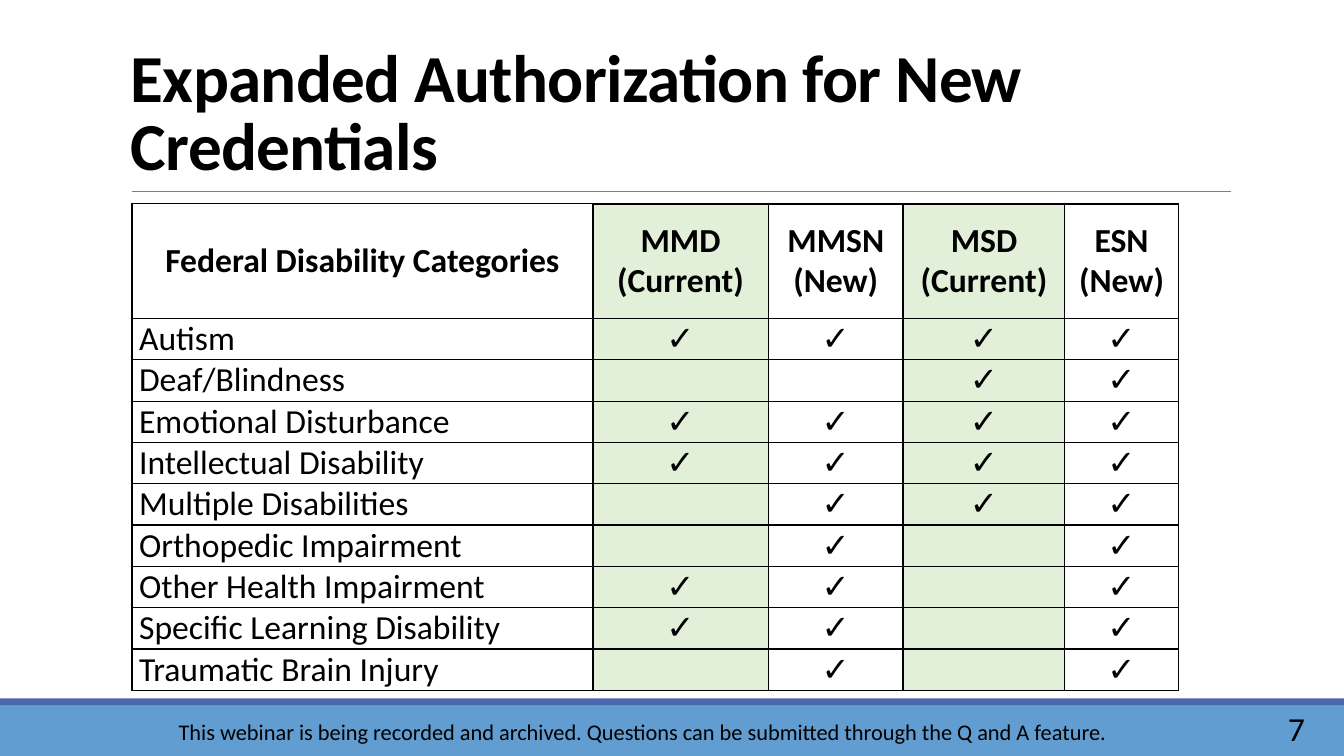
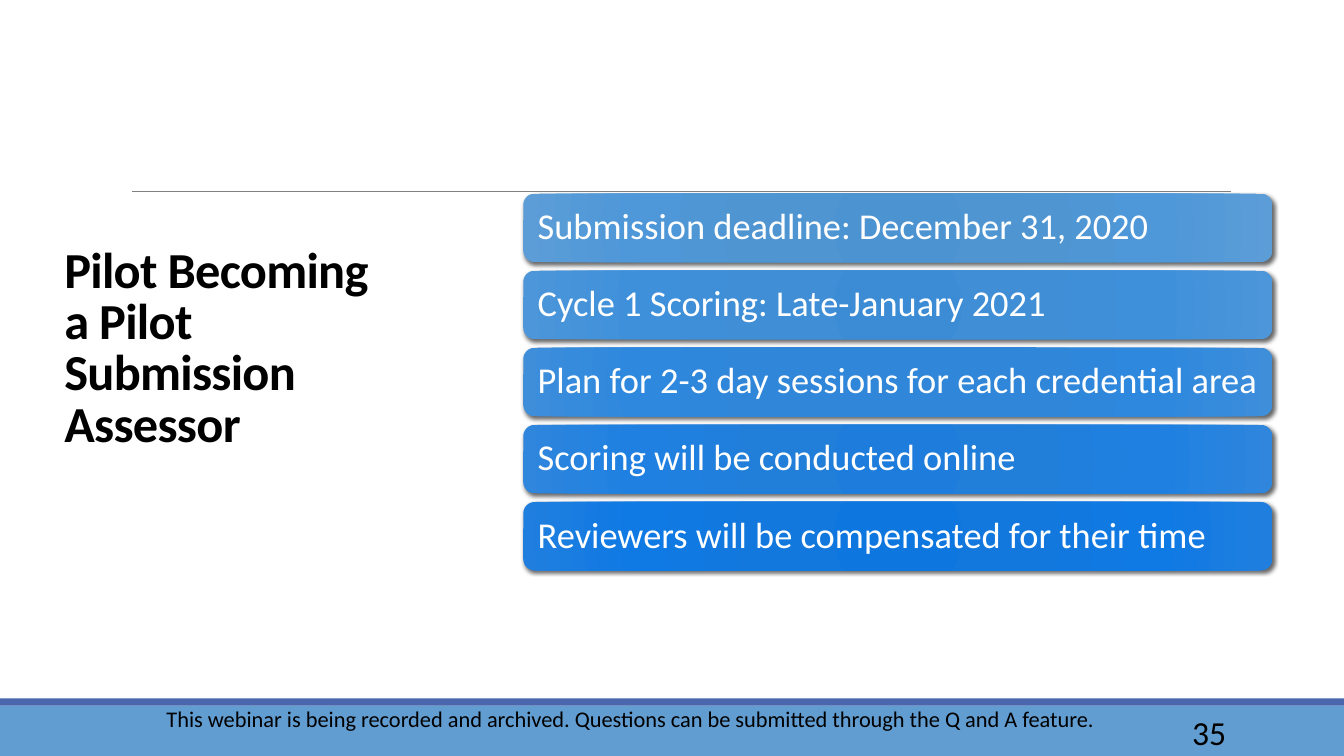
from lxml import etree
from pptx import Presentation
from pptx.dml.color import RGBColor
from pptx.enum.shapes import MSO_CONNECTOR, MSO_SHAPE
from pptx.enum.text import MSO_ANCHOR, PP_ALIGN
from pptx.oxml import parse_xml
from pptx.oxml.ns import nsdecls, qn
from pptx.util import Inches, Pt

RECTANGLE = MSO_SHAPE.RECTANGLE
ROUNDED = MSO_SHAPE.ROUNDED_RECTANGLE
STRAIGHT = MSO_CONNECTOR.STRAIGHT
MIDDLE = MSO_ANCHOR.MIDDLE
BOTTOM = MSO_ANCHOR.BOTTOM
LEFT = PP_ALIGN.LEFT
CENTER = PP_ALIGN.CENTER
RIGHT = PP_ALIGN.RIGHT

BLACK = RGBColor(0x00, 0x00, 0x00)
WHITE = RGBColor(0xFF, 0xFF, 0xFF)
GRAY = RGBColor(0x80, 0x80, 0x80)
FOOTER_BLUE = RGBColor(0x62, 0x9D, 0xD1)
STRIPE_BLUE = RGBColor(0x4A, 0x66, 0xAC)
CURRENT_GREEN = RGBColor(0xE2, 0xEF, 0xD9)

FONT = "Calibri"
SLIDE_WIDTH, SLIDE_HEIGHT = 13.33, 7.5
FOOTER_TEXT = (
    "This webinar is being recorded and archived. "
    "Questions can be submitted through the Q and A feature."
)

CHECK = "✓"
CATEGORY_ROWS = [
    ("Federal Disability Categories", "MMD (Current)", "MMSN (New)", "MSD (Current)", "ESN (New)"),
    ("Autism", CHECK, CHECK, CHECK, CHECK),
    ("Deaf/Blindness", "", "", CHECK, CHECK),
    ("Emotional Disturbance", CHECK, CHECK, CHECK, CHECK),
    ("Intellectual Disability", CHECK, CHECK, CHECK, CHECK),
    ("Multiple Disabilities", "", CHECK, CHECK, CHECK),
    ("Orthopedic Impairment", "", CHECK, "", CHECK),
    ("Other Health Impairment", CHECK, CHECK, "", CHECK),
    ("Specific Learning Disability", CHECK, CHECK, "", CHECK),
    ("Traumatic Brain Injury", "", CHECK, "", CHECK),
]
COLUMN_WIDTHS = [4.57, 1.74, 1.34, 1.6, 1.13]
HEADER_HEIGHT, ROW_HEIGHT = 1.14, 0.41
CURRENT_COLUMNS = (1, 3)
THIN, THICK = Pt(1), Pt(1.5)

ASSESSOR_POINTS = [
    "Submission deadline: December 31, 2020",
    "Cycle 1 Scoring: Late-January 2021",
    "Plan for 2-3 day sessions for each credential area",
    "Scoring will be conducted online",
    "Reviewers will be compensated for their time",
]
FIRST_BAR_TOP, LAST_BAR_TOP = 1.92, 4.98
GRADIENT_STOPS = [
    (0, RGBColor(0x4C, 0x93, 0xD2), RGBColor(0x0E, 0x76, 0xDF)),
    (34, RGBColor(0x4F, 0x95, 0xD2), RGBColor(0x12, 0x78, 0xDD)),
    (70, RGBColor(0x4E, 0x97, 0xD8), RGBColor(0x0F, 0x79, 0xE4)),
    (100, RGBColor(0x5C, 0x9D, 0xD7), RGBColor(0x20, 0x7F, 0xDE)),
]


def box(*lengths):
    return [Inches(length) for length in lengths]


def write(frame, text, size, color=BLACK, bold=False, align=LEFT, spacing=None):
    paragraph = frame.paragraphs[0]
    if text:
        paragraph.text = text
    paragraph.alignment = align
    paragraph.line_spacing = spacing
    font = paragraph.font
    font.name, font.size, font.bold = FONT, Pt(size), bold
    font.color.rgb = color
    return paragraph


def add_text(slide, place, text, size, anchor=MIDDLE, **style):
    frame = slide.shapes.add_textbox(*box(*place)).text_frame
    frame.word_wrap = True
    frame.vertical_anchor = anchor
    return write(frame, text, size, **style)


def add_title(slide, place, text, size, anchor):
    title = add_text(slide, place, text, size, anchor, bold=True, spacing=0.85)
    title._p.pPr.find(qn("a:defRPr")).set("spc", "-50")


def add_band(slide, top, height, color):
    band = slide.shapes.add_shape(RECTANGLE, *box(0, top, SLIDE_WIDTH, height))
    band.shadow.inherit = False
    band.fill.solid()
    band.fill.fore_color.rgb = color
    band.line.fill.background()


def add_rule(slide):
    rule = slide.shapes.add_connector(STRAIGHT, *box(1.31, 1.9, 12.21, 1.9))
    rule.line.color.rgb = GRAY
    rule.line.width = Pt(0.5)
    etree.SubElement(rule._element.spPr, qn("a:effectLst"))


def add_framed_slide(deck):
    slide = deck.slides.add_slide(deck.slide_layouts[6])
    add_band(slide, 7, 0.5, FOOTER_BLUE)
    add_band(slide, 6.93, 0.07, STRIPE_BLUE)
    add_rule(slide)
    return slide


def add_footer(slide, note_place, number_place, number):
    add_text(slide, note_place, FOOTER_TEXT, 16, align=CENTER)
    add_text(slide, number_place, number, 24, align=RIGHT)


def set_borders(cell, left, right, top, bottom):
    widths = {"lnL": left, "lnR": right, "lnT": top, "lnB": bottom}
    for position, (side, width) in enumerate(widths.items()):
        border = parse_xml(
            f'<a:{side} {nsdecls("a")} w="{width}"><a:solidFill>'
            f'<a:srgbClr val="{BLACK}"/></a:solidFill></a:{side}>'
        )
        cell._tc.get_or_add_tcPr().insert(position, border)


def fill_cell(cell, text, row, column):
    cell.margin_left = cell.margin_right = Inches(0.07)
    cell.margin_top = cell.margin_bottom = 0
    cell.vertical_anchor = MIDDLE
    is_header = row == 0
    align = CENTER if is_header or column else LEFT
    write(cell.text_frame, text, 24, bold=is_header, align=align)
    if column in CURRENT_COLUMNS:
        cell.fill.solid()
        cell.fill.fore_color.rgb = CURRENT_GREEN
    else:
        cell.fill.background()
    set_borders(
        cell,
        left=THICK if column in CURRENT_COLUMNS else THIN,
        right=THIN if column in CURRENT_COLUMNS else THICK,
        top=THICK if is_header and column else THIN,
        bottom=THIN,
    )


def add_category_table(slide):
    heights = [HEADER_HEIGHT] + [ROW_HEIGHT] * (len(CATEGORY_ROWS) - 1)
    table = slide.shapes.add_table(
        len(heights), len(COLUMN_WIDTHS),
        *box(1.31, 2.02, sum(COLUMN_WIDTHS), sum(heights)),
    ).table
    table.first_row = table.horz_banding = False
    for column, width in zip(table.columns, COLUMN_WIDTHS):
        column.width = Inches(width)
    for row, height in zip(table.rows, heights):
        row.height = Inches(height)
    for row, texts in enumerate(CATEGORY_ROWS):
        for column, text in enumerate(texts):
            fill_cell(table.cell(row, column), text, row, column)


def blend(start, end, share):
    return RGBColor(*(round(a + (b - a) * share) for a, b in zip(start, end)))


def radial_gradient(share):
    stops = "".join(
        f'<a:gs pos="{position * 1000}"><a:srgbClr val="{blend(start, end, share)}"/></a:gs>'
        for position, start, end in GRADIENT_STOPS
    )
    return parse_xml(
        f'<a:gradFill {nsdecls("a")} rotWithShape="1"><a:gsLst>{stops}</a:gsLst>'
        '<a:path path="circle">'
        '<a:fillToRect l="100000" t="100000" r="100000" b="100000"/>'
        '</a:path></a:gradFill>'
    )


def soft_shadow():
    return parse_xml(
        f'<a:effectLst {nsdecls("a")}>'
        f'<a:outerShdw blurRad="{Pt(3)}" dist="{Pt(2)}" dir="2700000" rotWithShape="0">'
        f'<a:srgbClr val="{BLACK}"><a:alpha val="60000"/></a:srgbClr>'
        '</a:outerShdw></a:effectLst>'
    )


def add_point_bar(slide, text, share):
    top = FIRST_BAR_TOP + (LAST_BAR_TOP - FIRST_BAR_TOP) * share
    bar = slide.shapes.add_shape(ROUNDED, *box(5.19, top, 7.43, 0.68))
    bar.line.fill.background()
    properties = bar._element.spPr
    properties.find(qn("a:prstGeom")).addnext(radial_gradient(share))
    properties.append(soft_shadow())
    frame = bar.text_frame
    frame.word_wrap = True
    frame.vertical_anchor = MIDDLE
    frame.margin_left = Inches(0.11)
    frame.margin_right = Inches(0.05)
    write(frame, text, 26, color=WHITE, spacing=0.9)


def build_authorization_slide(deck):
    slide = add_framed_slide(deck)
    add_title(slide, (1.2, 0.29, 11, 1.59),
              "Expanded Authorization for New Credentials", 48, BOTTOM)
    add_category_table(slide)
    add_footer(slide, (1.07, 7.06, 10.61, 0.4), (11.61, 7.02, 1.43, 0.4), "7")


def build_assessor_slide(deck):
    slide = add_framed_slide(deck)
    add_title(slide, (0.54, 0.57, 3.37, 5.8),
              "Pilot Becoming a Pilot Submission Assessor", 36, MIDDLE)
    for index, point in enumerate(ASSESSOR_POINTS):
        add_point_bar(slide, point, index / (len(ASSESSOR_POINTS) - 1))
    add_footer(slide, (1.07, 6.93, 10.37, 0.4), (11.07, 7.06, 1.19, 0.4), "35")


def main():
    deck = Presentation()
    deck.slide_width, deck.slide_height = box(SLIDE_WIDTH, SLIDE_HEIGHT)
    build_authorization_slide(deck)
    build_assessor_slide(deck)
    deck.save("out.pptx")


if __name__ == "__main__":
    main()
